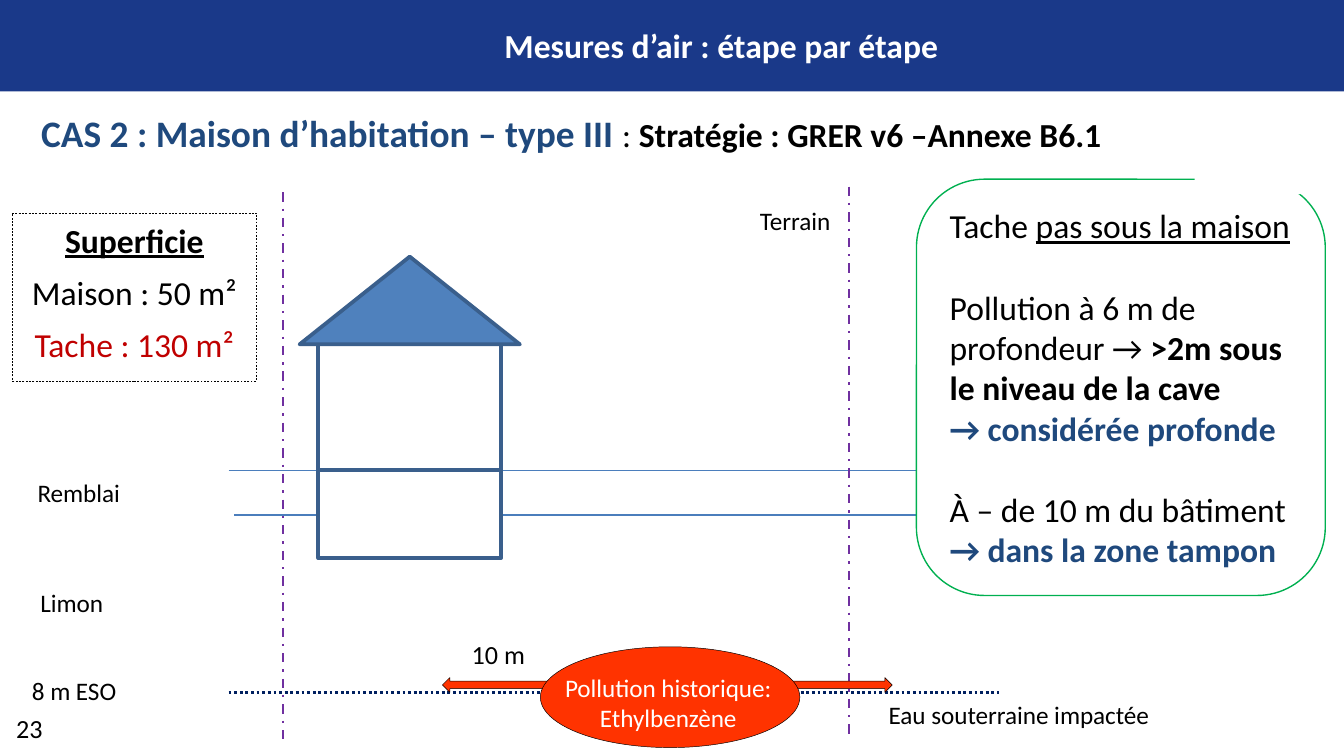
from lxml import etree
from pptx import Presentation
from pptx import util as u
from pptx.dml.color import RGBColor
from pptx.enum import dml, shapes, text
from pptx.oxml.ns import qn

Pt = u.Pt
SHAPE = shapes.MSO_SHAPE
DASH = dml.MSO_LINE
ALIGN = text.PP_ALIGN
ANCHOR = text.MSO_ANCHOR
COLORS = {
    "band": "1A3989", "white": "FFFFFF", "black": "000000", "title": "1F497D",
    "wall": "3A5F8C", "roof": "4F81BD", "soil": "4B7EBC", "limit": "7030A0",
    "water": "002060", "pollution": "FF3300", "frame": "00B050", "red": "C00000",
}
LABEL = {"size": 13.5}
BLANK_LINE = 22


def color(name):
    return RGBColor.from_string(COLORS[name])


def write(box, paras, align=ALIGN.LEFT, anchor=ANCHOR.TOP, wrap=True):
    """Each paragraph is (space before, [(words, format values), ...])."""
    frame = box.text_frame
    frame.word_wrap = wrap
    frame.vertical_anchor = anchor
    for index, (space, spans) in enumerate(paras):
        para = frame.paragraphs[0] if index == 0 else frame.add_paragraph()
        para.alignment = align
        para.space_before = Pt(space)
        for words, values in spans:
            span = para.add_run()
            span.text = words
            style = {"name": "Calibri", "size": 18, "color": "black", **values}
            span.font.color.rgb = color(style.pop("color"))
            style["size"] = Pt(style["size"])
            for key, value in style.items():
                setattr(span.font, key, value)


def add_text(page, area, paras, **options):
    box = page.shapes.add_textbox(*map(Pt, area))
    write(box, paras, **options)
    return box


def add_label(page, area, words, **options):
    return add_text(page, area, [(0, [(words, LABEL)])], **options)


def add_shape(page, kind, area, fill=None, line=None, width=0.25, dash=None):
    shape = page.shapes.add_shape(kind, *map(Pt, area))
    shape.shadow.inherit = False
    if fill:
        shape.fill.solid()
        shape.fill.fore_color.rgb = color(fill)
    else:
        shape.fill.background()
    if line:
        shape.line.color.rgb = color(line)
        shape.line.width = Pt(width)
        shape.line.dash_style = dash
    else:
        shape.line.fill.background()
    return shape


def add_line(page, start, end, line, width, dash=None):
    link = page.shapes.add_connector(
        shapes.MSO_CONNECTOR.STRAIGHT, *map(Pt, (*start, *end)))
    link.line.color.rgb = color(line)
    link.line.width = Pt(width)
    link.line.dash_style = dash
    etree.SubElement(link._element.spPr, qn("a:effectLst"))


def draw_header(page, left, top, width, height):
    add_shape(page, SHAPE.RECTANGLE, (left, top, width, height), "band")
    add_text(page, (left + 62.5, top + 10, 648, 29),
             [(0, [("Mesures d’air : étape par étape",
                    {"color": "white", "bold": True})])], align=ALIGN.CENTER)
    add_text(page, (left + 15, top + 55.5, 644, 32), [(0, [
        ("CAS 2 : Maison d’habitation – type III ",
         {"size": 20, "color": "title", "bold": True}),
        (": ", {}),
        ("Stratégie : GRER v6 –Annexe B6.1", {"bold": True})])])


def draw_ground(page, left, top, width, height):
    # Soil layers and water table
    for offset, y, length in ((0, 252, 408), (3, 276, 412)):
        add_line(page, (left + offset, y), (left + offset + length, y), "soil", 0.75)
    add_line(page, (left, 371), (left + 412.5, 371), "water", 1.5, DASH.ROUND_DOT)
    # Plot limits
    for x, y in ((left + 29, top + 3), (left + 332.5, top)):
        add_line(page, (x, y), (x, y + height), "limit", 1.25, DASH.DASH_DOT)
    for x, y, name in ((13, 252, "Remblai"), (14.5, 311, "Limon"),
                       (10, 358.5, "8 m ESO"), (400, 106.5, "Terrain")):
        add_label(page, (x, y, 76, 24), name)


def draw_house(page, left, top, width, height):
    roof, floor, cellar = 47, 67.5, 47
    wall = (width - 98) / 2
    add_shape(page, SHAPE.RECTANGLE, (left + wall, top + roof, 98, floor),
              None, "wall", 2)
    add_shape(page, SHAPE.ISOSCELES_TRIANGLE, (left, top, width, roof),
              "roof", "wall", 2)
    add_shape(page, SHAPE.RECTANGLE, (left + wall, top + height - cellar, 98, cellar),
              "white", "wall", 2)


def draw_pollution(page, left, top, width, height):
    for x, kind in ((left - 52.5, SHAPE.LEFT_ARROW),
                    (left + width - 7.5, SHAPE.RIGHT_ARROW)):
        add_shape(page, kind, (x, top + 16.5, 57, 8), "pollution", "black")
    add_shape(page, SHAPE.OVAL, (left, top, width, height), "pollution", "black")
    white = {**LABEL, "color": "white"}
    add_text(page, (left + 4.5, top + 10, 128, 40),
             [(0, [("Pollution historique:", white)]),
              (0, [("Ethylbenzène", white)])], align=ALIGN.CENTER)
    add_text(page, (left - 75.5, top - 8, 106, 24.5),
             [(0, [("10 m", {"size": 14})])], align=ALIGN.CENTER)
    add_label(page, (left + 179.5, top + 24.5, 203, 24), "Eau souterraine impactée")


def draw_areas(page, left, top, width, height):
    add_shape(page, SHAPE.RECTANGLE, (left, top, width, height),
              None, "black", 0.25, DASH.DASH)
    rows = (("Superficie", {"bold": True, "underline": True}),
            ("Maison : 50 m²", {}), ("Tache : 130 m²", {"color": "red"}))
    for index, (words, values) in enumerate(rows):
        add_text(page, (left, top + 28 * index, width, 32),
                 [(0, [(words, values)])], align=ALIGN.CENTER)


def draw_strategy(page, left, top, width, height):
    strong = {"bold": True}
    result = {"bold": True, "color": "title"}
    box = add_shape(page, SHAPE.ROUNDED_RECTANGLE, (left, top, width, height),
                    "white", "frame", 0.75)
    write(box, [
        (0, [("Tache ", {}), ("pas sous la maison", {"underline": True})]),
        (BLANK_LINE, [("Pollution à 6 m de profondeur → ", {}),
                      (">2m sous le niveau de la cave", strong)]),
        (0, [("→ considérée profonde", result)]),
        (BLANK_LINE, [("À – de 10 m du bâtiment ", {}),
                      ("→ dans la zone tampon", result)]),
    ], anchor=ANCHOR.MIDDLE)
    # Gap in the frame's upper edge
    add_shape(page, SHAPE.RECTANGLE, (left + 149, top - 31, 69, 39), "white")


def main():
    deck = Presentation()
    deck.slide_width, deck.slide_height = Pt(720), Pt(405)
    page = deck.slides.add_slide(deck.slide_layouts[6])
    draw_header(page, 0, 0, 720, 49)
    draw_ground(page, 122.5, 100, 412, 294)
    draw_house(page, 160.5, 137.5, 118, 161.5)
    draw_pollution(page, 289.5, 346.5, 139, 54)
    draw_areas(page, 6.5, 114, 131, 90)
    draw_strategy(page, 491, 96, 219, 223)
    # Page number
    add_text(page, (1.5, 378, 38, 24.5), [(0, [("23", {"size": 14})])], wrap=False)
    deck.save("out.pptx")


if __name__ == "__main__":
    main()
